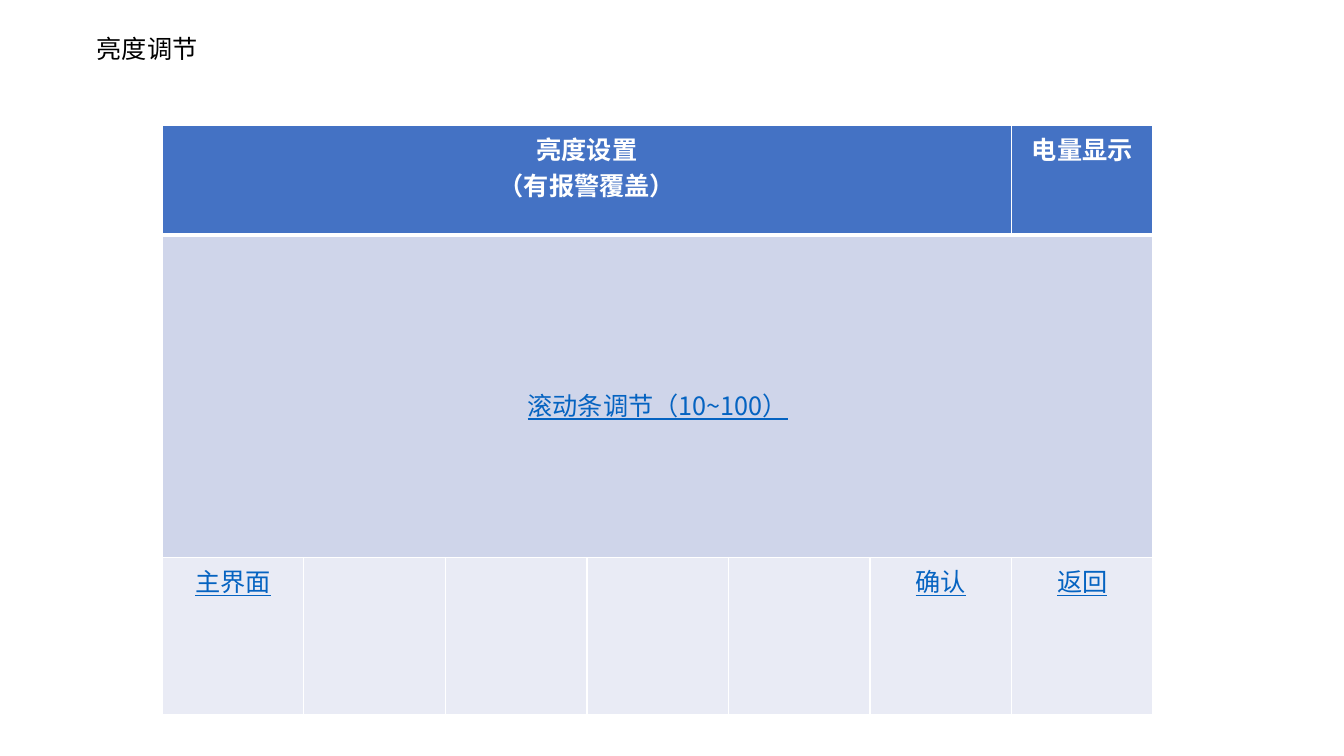
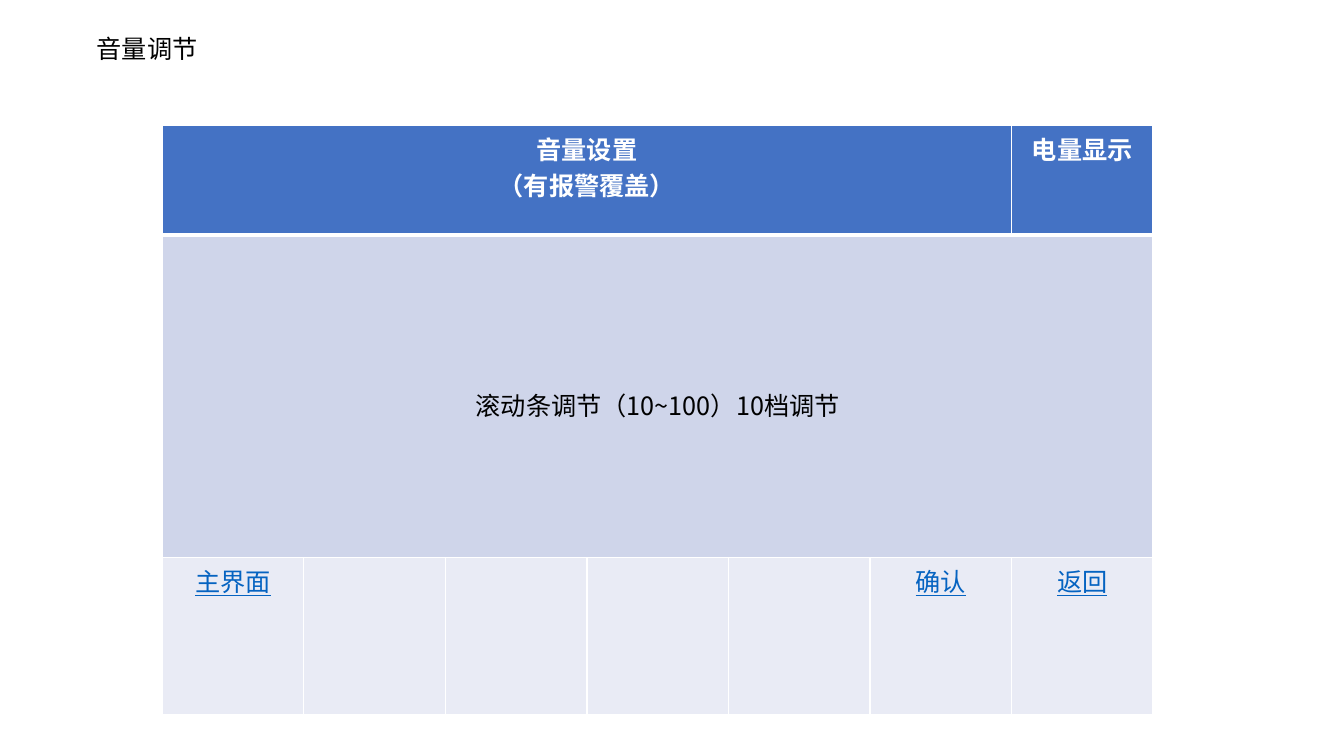
from lxml import etree
from pptx import Presentation
from pptx import util as u
from pptx.dml.color import RGBColor
from pptx.enum import text
from pptx.oxml import ns

COLORS = {"header": "4472C4", "body": "CFD5EA", "button": "E9EBF5",
          "white": "FFFFFF", "ink": "000000", "link": "0563C1"}
HEADING = {"color": "white", "bold": True}
PLAIN = {"color": "ink", "bold": False}
LINK = {"color": "link", "bold": False, "underline": True}


class ScreenDeck:
    """Builds wireframe slides of device settings screens."""

    font = "Noto Sans CJK SC"
    size = 18
    column_count = 7
    column_width = 101.1
    row_heights = (78.5, 230.4, 112.3)
    slider_inset = 108

    def __init__(self):
        self.deck = Presentation()
        self.deck.slide_width = u.Pt(960)
        self.deck.slide_height = u.Pt(540)
        self.page = None

    def add_page(self):
        self.page = self.deck.slides.add_slide(self.deck.slide_layouts[6])

    def add_lines(self, frame, lines, style, align):
        for index, line in enumerate(lines):
            para = frame.paragraphs[0] if index == 0 else frame.add_paragraph()
            para.alignment = align
            span = para.add_run()
            span.text = line
            values = {"name": self.font, "size": u.Pt(self.size), **style}
            span.font.color.rgb = RGBColor.from_string(COLORS[values.pop("color")])
            for key, value in values.items():
                setattr(span.font, key, value)
            etree.SubElement(span.font._element, ns.qn("a:ea"), typeface=self.font)

    def title(self, words):
        box = self.page.shapes.add_textbox(u.Pt(62), u.Pt(20.2), u.Pt(87), u.Pt(29))
        box.text_frame.word_wrap = False
        box.text_frame.auto_size = text.MSO_AUTO_SIZE.SHAPE_TO_FIT_TEXT
        self.add_lines(box.text_frame, [words], PLAIN, text.PP_ALIGN.LEFT)

    def border(self, cell, side, width):
        line = etree.SubElement(cell._tc.get_or_add_tcPr(), ns.qn(f"a:ln{side}"),
                                w=str(u.Pt(width)))
        fill = etree.SubElement(line, ns.qn("a:solidFill"))
        etree.SubElement(fill, ns.qn("a:srgbClr"), val=COLORS["white"])

    def grid(self):
        rows, columns = len(self.row_heights), self.column_count
        table = self.page.shapes.add_table(
            rows, columns, u.Pt(116), u.Pt(89.3),
            u.Pt(self.column_width * columns), u.Pt(sum(self.row_heights))).table
        for column in table.columns:
            column.width = u.Pt(self.column_width)
        for index, (height, color) in enumerate(
                zip(self.row_heights, ("header", "body", "button"))):
            table.rows[index].height = u.Pt(height)
            for cell in table.rows[index].cells:
                for side in "LRTB":
                    thick = (index, side) in ((0, "B"), (1, "T"))
                    self.border(cell, side, 3 if thick else 1)
                cell.fill.solid()
                cell.fill.fore_color.rgb = RGBColor.from_string(COLORS[color])
        table.cell(0, 0).merge(table.cell(0, columns - 2))
        table.cell(1, 0).merge(table.cell(1, columns - 1))
        return table

    def screen(self, subject, slider, slider_style):
        self.add_page()
        self.title(f"{subject}调节")
        table = self.grid()
        entries = [
            (0, 0, [f"{subject}设置", "（有报警覆盖）"], HEADING),
            (0, 6, ["电量显示"], HEADING),
            (1, 0, [slider], slider_style),
            (2, 0, ["主界面"], LINK),
            (2, 5, ["确认"], LINK),
            (2, 6, ["返回"], LINK),
        ]
        for row, column, lines, style in entries:
            self.add_lines(table.cell(row, column).text_frame, lines, style,
                           text.PP_ALIGN.CENTER)
        table.cell(1, 0).margin_top = u.Pt(self.slider_inset)


def main():
    screens = ScreenDeck()
    screens.screen("亮度", "滚动条调节（10~100）", LINK)
    screens.screen("音量", "滚动条调节（10~100）10档调节", PLAIN)
    screens.deck.save("out.pptx")


if __name__ == "__main__":
    main()
